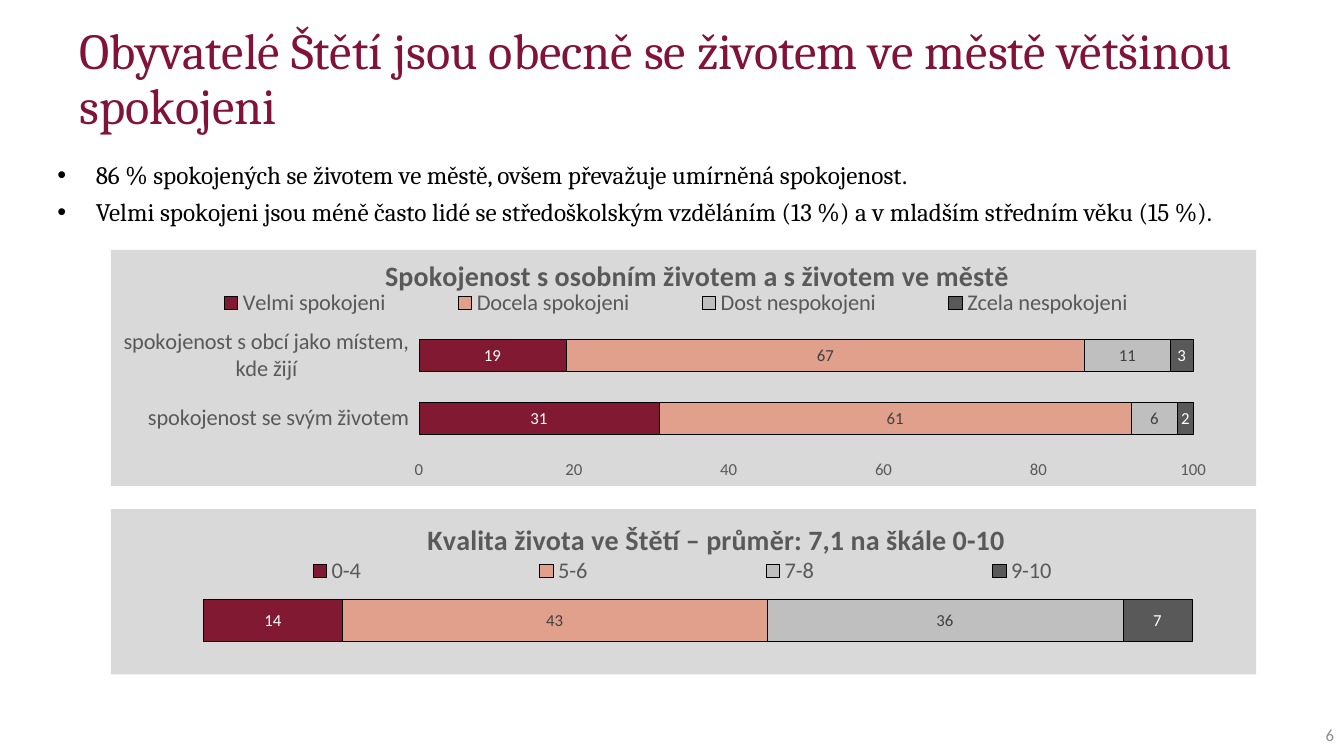
from dataclasses import dataclass
from typing import Any

from lxml.etree import SubElement
from pptx import Presentation
from pptx.chart.chart import Chart
from pptx.chart.data import CategoryChartData
from pptx.dml.color import RGBColor
from pptx.enum.chart import XL_CHART_TYPE, XL_LEGEND_POSITION, XL_TICK_LABEL_POSITION, XL_TICK_MARK
from pptx.enum.text import MSO_ANCHOR, MSO_AUTO_SIZE, PP_ALIGN
from pptx.oxml import parse_xml
from pptx.oxml.ns import nsdecls, qn
from pptx.slide import Slide
from pptx.util import Inches, Pt

COLORS = {
    "heading": "811339", "body": "000000", "page": "8C8C8C", "panel": "D9D9D9",
    "label": "595959", "dark_value": "404040", "light_value": "FFFFFF",
    "wine": "821932", "salmon": "E1A08C", "silver": "BFBFBF", "charcoal": "595959",
}
SERIES_COLORS = [("wine", "light_value"), ("salmon", "dark_value"),
                 ("silver", "dark_value"), ("charcoal", "light_value")]
FRAME = {"margin_left": 0, "margin_right": 0, "margin_top": 0, "margin_bottom": 0,
         "word_wrap": True, "auto_size": MSO_AUTO_SIZE.NONE, "vertical_anchor": MSO_ANCHOR.TOP}
HEADING = "Obyvatelé Štětí jsou obecně se životem ve městě většinou spokojeni"
FINDINGS = [
    "86 % spokojených se životem ve městě, ovšem převažuje umírněná spokojenost.",
    "Velmi spokojeni jsou méně často lidé se středoškolským vzděláním (13 %) "
    "a v mladším středním věku (15 %).",
]


@dataclass
class Survey:
    """Describe one stacked bar panel; layouts are percentages of the panel."""
    title: str
    top: float
    height: float
    categories: list[str]
    answers: dict[str, list[int]]
    title_layout: tuple[float, ...]
    legend_layout: tuple[float, ...]
    plot_layout: tuple[float, ...]
    show_axes: bool


SURVEYS = [
    Survey("Spokojenost s osobním životem a s životem ve městě", 2.48, 2.34,
           ["spokojenost se svým životem", "spokojenost s obcí jako místem, kde žijí"],
           {"Velmi spokojeni": [31, 19], "Docela spokojeni": [61, 67],
            "Dost nespokojeni": [6, 11], "Zcela nespokojeni": [2, 3]},
           (23.5, 0.2), (4.2, 16.5, 90.3, 12), (26.9, 31.4, 67.6, 53.4), True),
    Survey("Kvalita života ve Štětí – průměr: 7,1 na škále 0-10", 5.05, 1.64, ["1"],
           {"0-4": [14], "5-6": [43], "7-8": [36], "9-10": [7]},
           (27.2, 3.3), (2.7, 29, 94.4, 17), (8.1, 41.6, 86.3, 51.6), False),
]


def apply_formats(target: Any, formats: dict[str, Any]) -> None:
    """Set each named attribute on the target."""
    for name, value in formats.items():
        setattr(target, name, value)


def rgb(color: str) -> RGBColor:
    """Return a palette colour."""
    return RGBColor.from_string(COLORS[color])


def style_font(font: Any, size: float, color: str, name: str = "Calibri", bold: bool = False) -> None:
    """Format a font."""
    apply_formats(font, {"size": Pt(size), "name": name, "bold": bold})
    font.color.rgb = rgb(color)


def place(part: Any, index: int, layout: tuple[float, ...], inner: bool = False) -> None:
    """Give a chart part a manual layout."""
    for old in part.findall(qn("c:layout")):
        part.remove(old)
    element = parse_xml(f"<c:layout {nsdecls('c')}/>")
    manual = SubElement(element, qn("c:manualLayout"))
    settings = [("layoutTarget", "inner")] if inner else []
    settings += [("xMode", "edge"), ("yMode", "edge")]
    settings += [(side, f"{percent / 100:.3f}") for side, percent in zip("xywh", layout)]
    for tag, value in settings:
        SubElement(manual, qn(f"c:{tag}")).set("val", value)
    part.insert(index, element)


def style_axes(chart: Chart, visible: bool) -> None:
    """Set the 0 to 100 scale and the look of both axes."""
    scale, questions = chart.value_axis, chart.category_axis
    apply_formats(scale, {"minimum_scale": 0, "maximum_scale": 100, "major_unit": 20,
                          "has_major_gridlines": True})
    scale.major_gridlines.format.line.color.rgb = rgb("panel")
    scale.major_gridlines.format.line.width = Pt(0.75)
    for axis, size in ((scale, 12), (questions, 16)):
        apply_formats(axis, {"visible": visible, "major_tick_mark": XL_TICK_MARK.OUTSIDE,
                             "tick_label_position": XL_TICK_LABEL_POSITION.NEXT_TO_AXIS})
        style_font(axis.tick_labels.font, size, "label")
    apply_formats(scale.tick_labels, {"number_format": "0", "number_format_is_linked": False})
    scale.format.line.fill.background()
    questions.format.line.color.rgb = rgb("panel")
    questions.format.line.width = Pt(0.75)


def add_survey(slide: Slide, survey: Survey) -> None:
    """Draw one survey panel as a stacked bar chart."""
    table = CategoryChartData(number_format="0")
    table.categories = survey.categories
    for answer, shares in survey.answers.items():
        table.add_series(answer, shares)
    chart = slide.shapes.add_chart(
        XL_CHART_TYPE.BAR_STACKED, Inches(1.1), Inches(survey.top),
        Inches(11.36), Inches(survey.height), table).chart
    style_font(chart.font, 10, "body")
    apply_formats(chart, {"has_title": True, "has_legend": True})
    heading = chart.chart_title.text_frame
    heading.text = survey.title
    style_font(heading.paragraphs[0].runs[0].font, 20, "label", bold=True)
    apply_formats(chart.legend, {"position": XL_LEGEND_POSITION.BOTTOM, "include_in_layout": False})
    style_font(chart.legend.font, 16, "label")
    style_axes(chart, survey.show_axes)

    bars = chart.plots[0]
    apply_formats(bars, {"gap_width": 100, "overlap": 100, "vary_by_categories": False})
    for answer, (fill, value_color) in zip(bars.series, SERIES_COLORS):
        answer.format.fill.solid()
        answer.format.fill.fore_color.rgb = rgb(fill)
        answer.format.line.color.rgb = rgb("body")
        answer.format.line.width = Pt(0.5)
        apply_formats(answer.data_labels, {"show_value": True, "number_format": "0",
                                           "number_format_is_linked": False})
        style_font(answer.data_labels.font, 12, value_color)

    root = chart._chartSpace.find(qn("c:chart"))
    place(root.find(qn("c:title")), 1, survey.title_layout)
    place(root.find(qn("c:legend")), 1, survey.legend_layout)
    place(root.find(qn("c:plotArea")), 0, survey.plot_layout, inner=True)
    root.addnext(parse_xml(
        f'<c:spPr {nsdecls("c", "a")}><a:solidFill><a:srgbClr val="{COLORS["panel"]}"/>'
        "</a:solidFill><a:ln><a:noFill/></a:ln></c:spPr>"))


def add_heading(slide: Slide) -> None:
    """Fill and format the title placeholder."""
    title = slide.shapes.title
    apply_formats(title, {"left": Inches(0.79), "top": Inches(0.26),
                          "width": Inches(11.77), "height": Inches(1.07)})
    apply_formats(title.text_frame, {"text": HEADING, **FRAME})
    line = title.text_frame.paragraphs[0]
    apply_formats(line, {"alignment": PP_ALIGN.LEFT, "line_spacing": 0.9})
    style_font(line.runs[0].font, 36, "heading", "Cambria")


def add_findings(slide: Slide) -> None:
    """Add the bulleted findings."""
    frame = slide.shapes.add_textbox(Inches(0.28), Inches(1.58), Inches(12.72), Inches(0.8)).text_frame
    apply_formats(frame, FRAME)
    for index, text in enumerate(FINDINGS):
        finding = frame.add_paragraph() if index else frame.paragraphs[0]
        properties = finding._p.get_or_add_pPr()
        properties.set("marL", str(Inches(0.67)))
        properties.set("indent", str(Inches(-0.38)))
        SubElement(properties, qn("a:buFont")).set("typeface", "Arial")
        SubElement(properties, qn("a:buChar")).set("char", "•")
        finding.space_before = Pt(5 if index else 0)
        run = finding.add_run()
        run.text = text
        style_font(run.font, 18, "body", "Cambria")


def add_page_number(slide: Slide) -> None:
    """Add the page number in the bottom right corner."""
    frame = slide.shapes.add_textbox(Inches(12.75), Inches(7.09), Inches(0.58), Inches(0.4)).text_frame
    apply_formats(frame, {"text": "6", "word_wrap": True, "vertical_anchor": MSO_ANCHOR.MIDDLE})
    number = frame.paragraphs[0]
    number.alignment = PP_ALIGN.RIGHT
    style_font(number.runs[0].font, 12, "page")


def main() -> None:
    """Build and save the slide."""
    deck = Presentation()
    apply_formats(deck, {"slide_width": Inches(13.33), "slide_height": Inches(7.5)})
    slide = deck.slides.add_slide(deck.slide_layouts[5])
    add_heading(slide)
    add_findings(slide)
    add_page_number(slide)
    for survey in SURVEYS:
        add_survey(slide, survey)
    deck.save("out.pptx")


if __name__ == "__main__":
    main()
